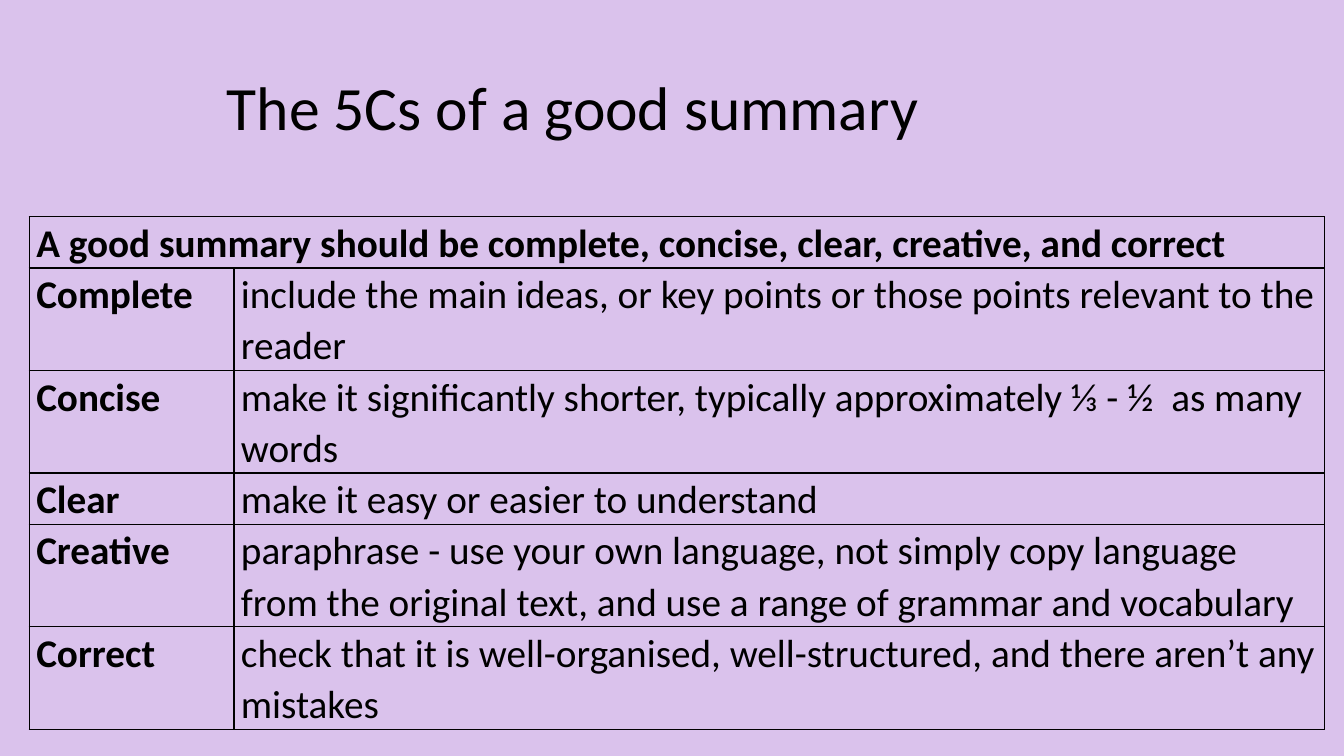
from dataclasses import dataclass

from lxml.etree import SubElement
from pptx import Presentation
from pptx.dml.color import RGBColor
from pptx.enum.text import MSO_ANCHOR, PP_ALIGN
from pptx.oxml.ns import qn
from pptx.util import Inches, Pt


@dataclass(frozen=True)
class Theme:
    font: str = "Calibri"
    background: str = "DAC2EC"
    ink: str = "000000"
    title_size: int = 44
    table_size: int = 28
    border_width: int = 1


TITLE = "The 5Cs of a good summary"
HEADING = "A good summary should be complete, concise, clear, creative, and correct"
# Label, advice, number of text lines
CRITERIA = [
    ("Complete", "include the main ideas, or key points or those points relevant to the reader", 2),
    ("Concise", "make it significantly shorter, typically approximately ⅓ - ½  as many words", 2),
    ("Clear", "make it easy or easier to understand", 1),
    ("Creative", "paraphrase - use your own language, not simply copy language from the "
                 "original text, and use a range of grammar and vocabulary", 2),
    ("Correct", "check that it is well-organised, well-structured, and there aren’t any mistakes", 2),
]
COLUMN_WIDTHS = (2.03, 10.82)
LINE_HEIGHT = 0.5


class SlideBuilder:
    def __init__(self, presentation, theme):
        self.theme = theme
        self.slide = presentation.slides.add_slide(presentation.slide_layouts[5])
        self.fill(self.slide.background.fill)

    def fill(self, fill):
        fill.solid()
        fill.fore_color.rgb = RGBColor.from_string(self.theme.background)

    def text(self, frame, text, size, line_spacing, bold=False):
        paragraph = frame.paragraphs[0]
        paragraph.alignment = PP_ALIGN.LEFT
        paragraph.line_spacing = line_spacing
        run = paragraph.add_run()
        run.text = text
        run.font.name = self.theme.font
        run.font.size = Pt(size)
        run.font.bold = bold
        run.font.color.rgb = RGBColor.from_string(self.theme.ink)

    def title(self, text, left, top, width, height):
        title = self.slide.shapes.title
        title.left, title.top = Inches(left), Inches(top)
        title.width, title.height = Inches(width), Inches(height)
        title.text_frame.word_wrap = True
        title.text_frame.vertical_anchor = MSO_ANCHOR.MIDDLE
        self.text(title.text_frame, text, self.theme.title_size, 0.9)

    def border(self, cell):
        """Outline all four sides; call before the cell gets its fill."""
        properties = cell._tc.get_or_add_tcPr()
        for side in ("a:lnL", "a:lnR", "a:lnT", "a:lnB"):
            line = SubElement(properties, qn(side), w=str(Pt(self.theme.border_width)))
            solid = SubElement(line, qn("a:solidFill"))
            SubElement(solid, qn("a:srgbClr"), val=self.theme.ink)

    def cell(self, cell, text, bold):
        self.text(cell.text_frame, text, self.theme.table_size, 1.07, bold)

    def table(self, heading, criteria, left, top):
        lines = [1] + [count for _, _, count in criteria]
        table = self.slide.shapes.add_table(
            len(lines), len(COLUMN_WIDTHS), Inches(left), Inches(top),
            Inches(sum(COLUMN_WIDTHS)), Inches(LINE_HEIGHT * sum(lines))).table
        table.first_row = table.horz_banding = False
        for column, width in zip(table.columns, COLUMN_WIDTHS):
            column.width = Inches(width)
        for row, count in zip(table.rows, lines):
            row.height = Inches(LINE_HEIGHT * count)
        for cell in table.iter_cells():
            cell.margin_left = cell.margin_right = Inches(0.07)
            cell.margin_top = cell.margin_bottom = 0
            self.border(cell)
            self.fill(cell.fill)

        table.cell(0, 0).merge(table.cell(0, 1))
        self.cell(table.cell(0, 0), heading, bold=True)
        for row, (label, advice, _) in enumerate(criteria, start=1):
            self.cell(table.cell(row, 0), label, bold=True)
            self.cell(table.cell(row, 1), advice, bold=False)


def main():
    presentation = Presentation()
    presentation.slide_width = Inches(13.33)
    presentation.slide_height = Inches(7.5)
    builder = SlideBuilder(presentation, Theme())
    builder.title(TITLE, 2.15, 0.37, 11.5, 1.45)
    builder.table(HEADING, CRITERIA, 0.29, 2.15)
    presentation.save("out.pptx")


if __name__ == "__main__":
    main()
